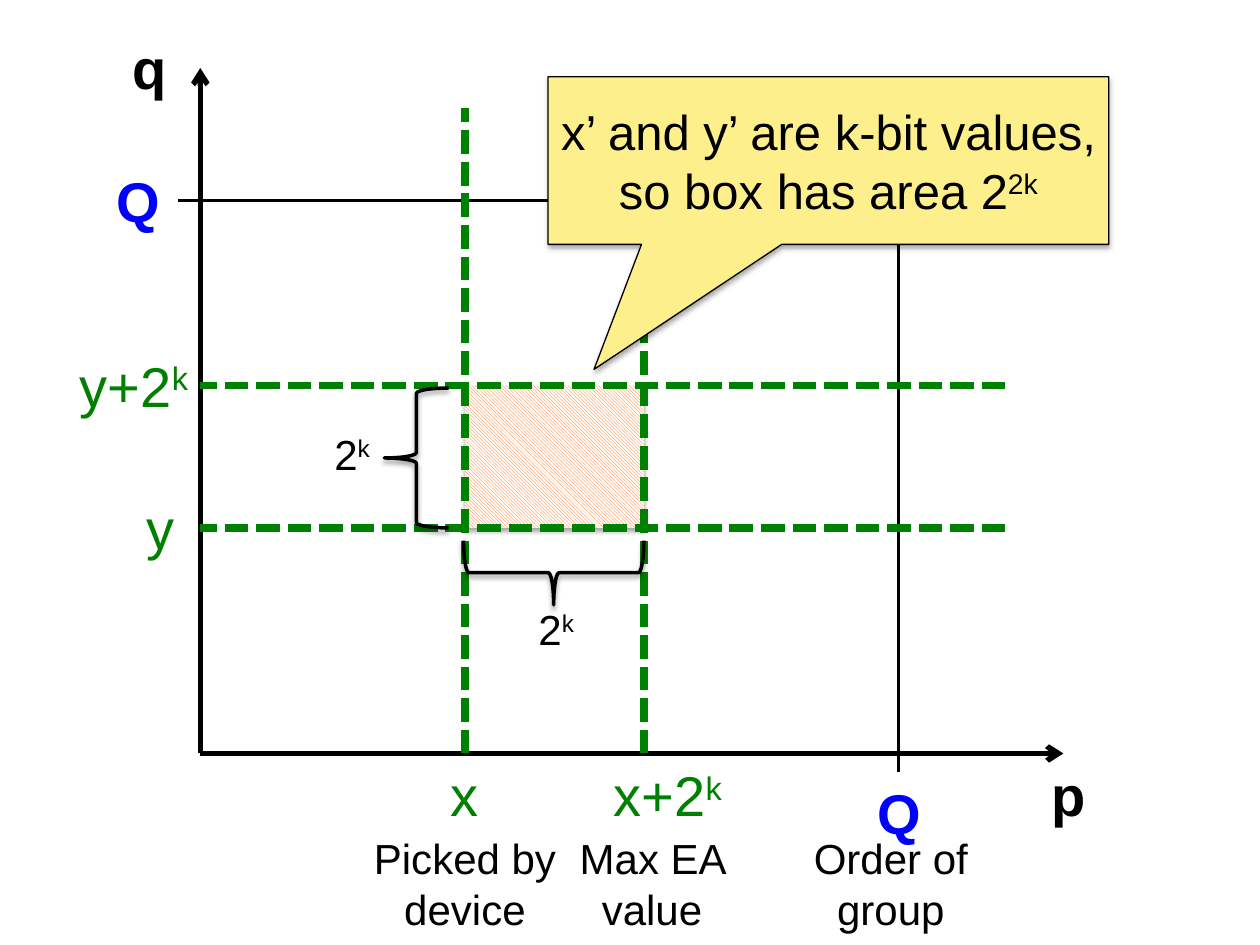
import pptx
import pptx.util
import pptx.dml.color
import pptx.enum.dml
import pptx.enum.shapes
import pptx.enum.text
import pptx.oxml
import pptx.oxml.ns
import lxml.etree

Inches, Pt = pptx.util.Inches, pptx.util.Pt
RGB = pptx.dml.color.RGBColor.from_string
SHAPE = pptx.enum.shapes.MSO_SHAPE
ALIGN = pptx.enum.text.PP_ALIGN
ANCHOR = pptx.enum.text.MSO_ANCHOR
qn = pptx.oxml.ns.qn

COLORS = {"black": "000000", "white": "FFFFFF", "green": "008000",
          "blue": "0000FF", "orange": "FF6600", "yellow": "FDF08C"}

prs = pptx.Presentation()
prs.slide_width, prs.slide_height = Inches(10), Inches(7.5)
s = prs.slides.add_slide(prs.slide_layouts[6])


def write(sp, text, sup="", size=24, color="black", bold=False,
          align=ALIGN.CENTER, anchor=ANCHOR.MIDDLE):
    """Fill a shape with one paragraph, ending in an optional superscript."""
    tf = sp.text_frame
    tf.word_wrap = True
    tf.vertical_anchor = anchor
    p = tf.paragraphs[0]
    p.alignment = align
    for part, baseline in ((text, None), (sup, "30000")):
        if not part:
            continue
        r = p.add_run()
        r.text = part
        r.font.name, r.font.size, r.font.bold = "Arial", Pt(size), bold
        r.font.color.rgb = RGB(COLORS[color])
        if baseline:
            r._r.get_or_add_rPr().set("baseline", baseline)


def add_shadowed(kind, box, line_width, alpha=35):
    """Add a shape with a soft shadow below; line_width 0 means no outline."""
    sp = s.shapes.add_shape(kind, *map(Inches, box))
    sp.fill.background()
    if line_width:
        sp.line.color.rgb = RGB(COLORS["black"])
        sp.line.width = Pt(line_width)
    else:
        sp.line.fill.background()
    sp.shadow.inherit = False
    effects = sp._element.spPr.find(qn("a:effectLst"))
    shadow = lxml.etree.SubElement(
        effects, qn("a:outerShdw"), blurRad=str(Pt(3.1)), dist=str(Pt(1.8)),
        dir="5400000", rotWithShape="0")
    rgb = lxml.etree.SubElement(shadow, qn("a:srgbClr"), val=COLORS["black"])
    lxml.etree.SubElement(rgb, qn("a:alpha"), val=str(alpha * 1000))
    return sp


# Plot coordinates
left, bottom = 1.59, 5.98
x_low, x_high = 3.69, 5.11
y_low, y_high = 4.19, 3.06
q_x, q_y = 7.13, 1.59

# Hatched search box
area = add_shadowed(SHAPE.RECTANGLE,
                    (x_low, y_high, x_high - x_low, y_low - y_high), 0)
area.fill.patterned()
area.fill.pattern = pptx.enum.dml.MSO_PATTERN.DARK_DOWNWARD_DIAGONAL
area.fill.fore_color.rgb = RGB(COLORS["orange"])
area.fill.back_color.rgb = RGB(COLORS["white"])

# Axes, group order limits and dashed bounds
lines = [
    ("axis", left, bottom, 8.44, bottom),
    ("axis", left, bottom, left, 0.54),
    ("limit", q_x, 6.13, q_x, q_y),
    ("limit", q_x, q_y, 1.41, q_y),
]
lines += [("bound", x, bottom, x, 0.86) for x in (x_low, x_high)]
lines += [("bound", 7.98, y, left, y) for y in (y_low, y_high)]
line_styles = {"axis": ("black", 3), "limit": ("black", 1.5), "bound": ("green", 4.5)}
for kind, *ends in lines:
    color, width = line_styles[kind]
    c = s.shapes.add_connector(pptx.enum.shapes.MSO_CONNECTOR.STRAIGHT,
                               *map(Inches, ends))
    c.line.color.rgb = RGB(COLORS[color])
    c.line.width = Pt(width)
    if kind == "bound":
        c.line.dash_style = pptx.enum.dml.MSO_LINE.SQUARE_DOT
    if kind == "axis":
        lxml.etree.SubElement(c.line._get_or_add_ln(), qn("a:tailEnd"), type="arrow")
    lxml.etree.SubElement(c._element.spPr, qn("a:effectLst"))

# Axis labels
axis_labels = [
    ("p", "", 8.17, 5.99, 0.63, "black", True, ALIGN.CENTER),
    ("q", "", 0.78, 0.22, 0.81, "black", True, ALIGN.CENTER),
    ("Q", "", 6.82, 6.13, 0.63, "blue", True, ALIGN.CENTER),
    ("Q", "", 0.78, 1.27, 0.63, "blue", True, ALIGN.CENTER),
    ("x", "", 3.37, 5.99, 0.63, "green", False, ALIGN.CENTER),
    ("y", "", 0.96, 3.87, 0.63, "green", False, ALIGN.CENTER),
    ("x+2", "k", 4.44, 5.99, 1.72, "green", False, ALIGN.CENTER),
    ("y+2", "k", -0.21, 2.74, 1.8, "green", False, ALIGN.RIGHT),
]
for text, sup, x, y, w, color, bold, align in axis_labels:
    sp = s.shapes.add_textbox(Inches(x), Inches(y), Inches(w), Inches(0.64))
    write(sp, text, sup, size=32, color=color, bold=bold, align=align,
          anchor=ANCHOR.TOP)

# Callout
callout = add_shadowed(SHAPE.RECTANGULAR_CALLOUT, (4.35, 0.61, 4.45, 1.33), 0.75)
callout.fill.solid()
callout.fill.fore_color.rgb = RGB(COLORS["yellow"])
callout.adjustments[0], callout.adjustments[1] = -0.418, 1.246
write(callout, "x’ and y’ are k-bit values, so box has area 2", "2k", size=28)

# Braces along the box sides
for box, rotation in (((4.14, 3.83, 0.51, 1.43), 270), ((3.05, 3.08, 0.51, 1.11), 0)):
    brace = add_shadowed(SHAPE.LEFT_BRACE, box, 2, alpha=38)
    brace.rotation = rotation

# Captions and brace lengths
captions = [
    ("Picked by device", "", 2.78, 6.63, 1.82),
    ("Max EA value", "", 4.41, 6.63, 1.53),
    ("Order of group", "", 6.16, 6.63, 1.82),
    ("2", "k", 3.65, 4.61, 1.53),
    ("2", "k", 2.03, 3.22, 1.53),
]
for text, sup, x, y, w in captions:
    sp = s.shapes.add_textbox(Inches(x), Inches(y), Inches(w), Inches(0.76))
    write(sp, text, sup)

prs.save("out.pptx")
